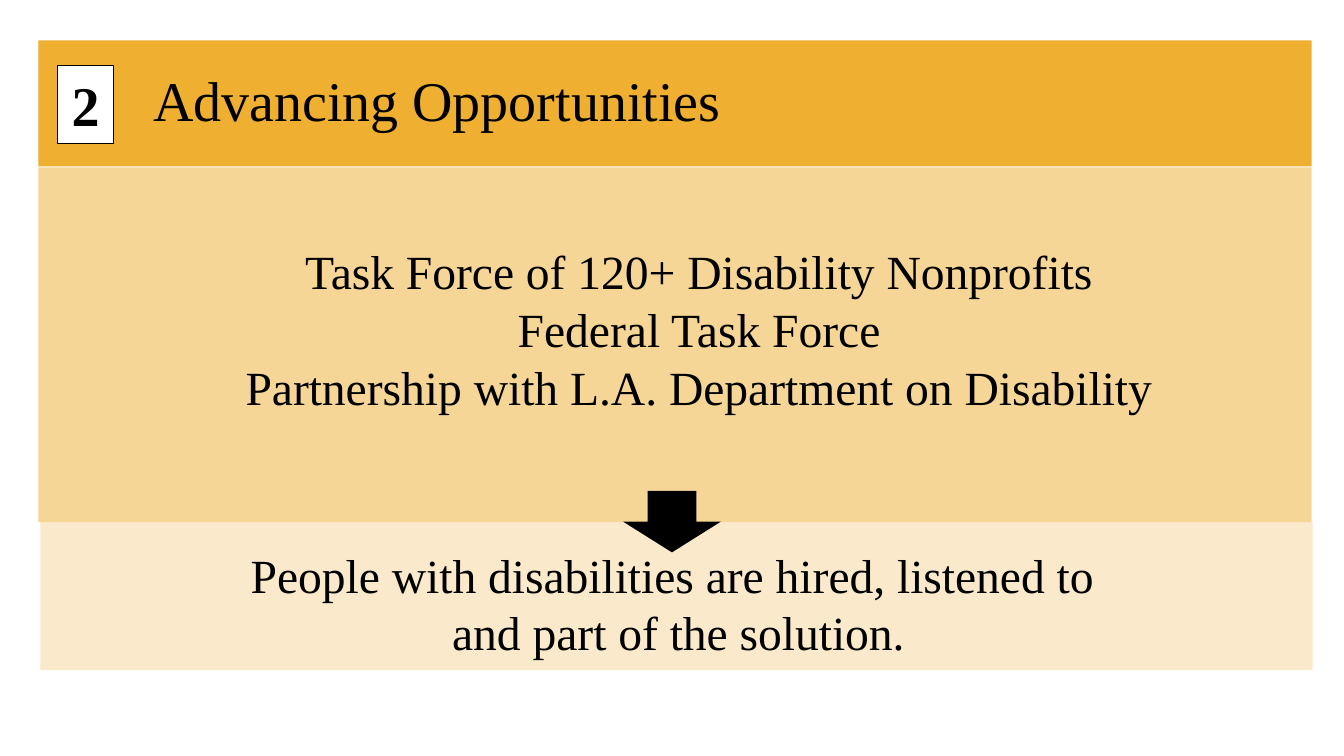
from dataclasses import dataclass

from lxml import etree
from pptx import Presentation
from pptx.dml.color import RGBColor
from pptx.enum.shapes import MSO_SHAPE
from pptx.enum.text import MSO_ANCHOR, PP_ALIGN
from pptx.oxml.ns import qn
from pptx.util import Emu, Pt

RECT, ARROW = MSO_SHAPE.RECTANGLE, MSO_SHAPE.DOWN_ARROW
TOP, MIDDLE = MSO_ANCHOR.TOP, MSO_ANCHOR.MIDDLE
LEFT, CENTER = PP_ALIGN.LEFT, PP_ALIGN.CENTER
SCALE = 9144  # EMU per px, 100 px to the inch
FONT = "Times New Roman"
GOLD, BLACK, WHITE = "EFAF30", "000000", "FFFFFF"

Box = tuple[int, int, int, int]


@dataclass
class Panel:
    box: Box
    fill: str
    alpha: int = 100
    kind: MSO_SHAPE = RECT
    line: str = ""


@dataclass
class Label:
    box: Box
    lines: list[str]
    size: int
    align: PP_ALIGN = CENTER
    anchor: MSO_ANCHOR = TOP
    bold: bool = False
    indent: int = 0
    lead: float = 1.0
    gap: int = 0


PANELS = [
    Panel((38, 40, 1263, 125), GOLD),
    Panel((40, 518, 1262, 147), GOLD, alpha=25),
    Panel((38, 166, 1263, 352), GOLD, alpha=50),
    Panel((618, 487, 97, 61), BLACK, kind=ARROW),
]
BADGE = Panel((57, 65, 56, 77), WHITE, line=BLACK)
NUMBER = Label(BADGE.box, ["2"], 40, bold=True)
LABELS = [
    Label((142, 40, 1065, 125), ["Advancing Opportunities"], 40,
          align=LEFT, anchor=MIDDLE, lead=0.9),
    Label((42, 216, 1253, 227),
          ["Task Force of 120+ Disability Nonprofits",
           "Federal Task Force",
           "Partnership with L.A. Department on Disability"],
          34, anchor=MIDDLE, indent=50, lead=0.9, gap=5),
    Label((42, 537, 1262, 125),
          ["People with disabilities are hired, listened to \vand part of the solution."], 34),
]


def px(n: int) -> Emu:
    return Emu(n * SCALE)


def color(code: str) -> RGBColor:
    return RGBColor.from_string(code)


def draw(slide, panel: Panel):
    shape = slide.shapes.add_shape(panel.kind, *map(px, panel.box))
    shape.shadow.inherit = False
    shape.fill.solid()
    shape.fill.fore_color.rgb = color(panel.fill)
    if panel.alpha < 100:
        tint = shape.fill._xPr.find(f".//{qn('a:srgbClr')}")
        etree.SubElement(tint, qn("a:alpha"), val=str(panel.alpha * 1000))
    if panel.line:
        shape.line.color.rgb = color(panel.line)
        shape.line.width = Pt(0.75)
    else:
        shape.line.fill.background()
    return shape


def write(shape, label: Label) -> None:
    frame = shape.text_frame
    frame.word_wrap = True
    frame.vertical_anchor = label.anchor
    frame.text = "\n".join(label.lines)
    for i, para in enumerate(frame.paragraphs):
        para.alignment = label.align
        para.line_spacing = label.lead
        if i and label.gap:
            para.space_before = Pt(label.gap)
        if label.indent:
            para._p.get_or_add_pPr().set("marL", str(px(label.indent)))
        para.font.name = FONT
        para.font.size = Pt(label.size)
        para.font.bold = label.bold
        para.font.color.rgb = color(BLACK)


def main() -> None:
    deck = Presentation()
    deck.slide_width, deck.slide_height = px(1333), px(750)
    slide = deck.slides.add_slide(deck.slide_layouts[6])
    for panel in PANELS:
        draw(slide, panel)
    write(draw(slide, BADGE), NUMBER)
    for label in LABELS:
        write(slide.shapes.add_textbox(*map(px, label.box)), label)
    deck.save("out.pptx")


if __name__ == "__main__":
    main()
